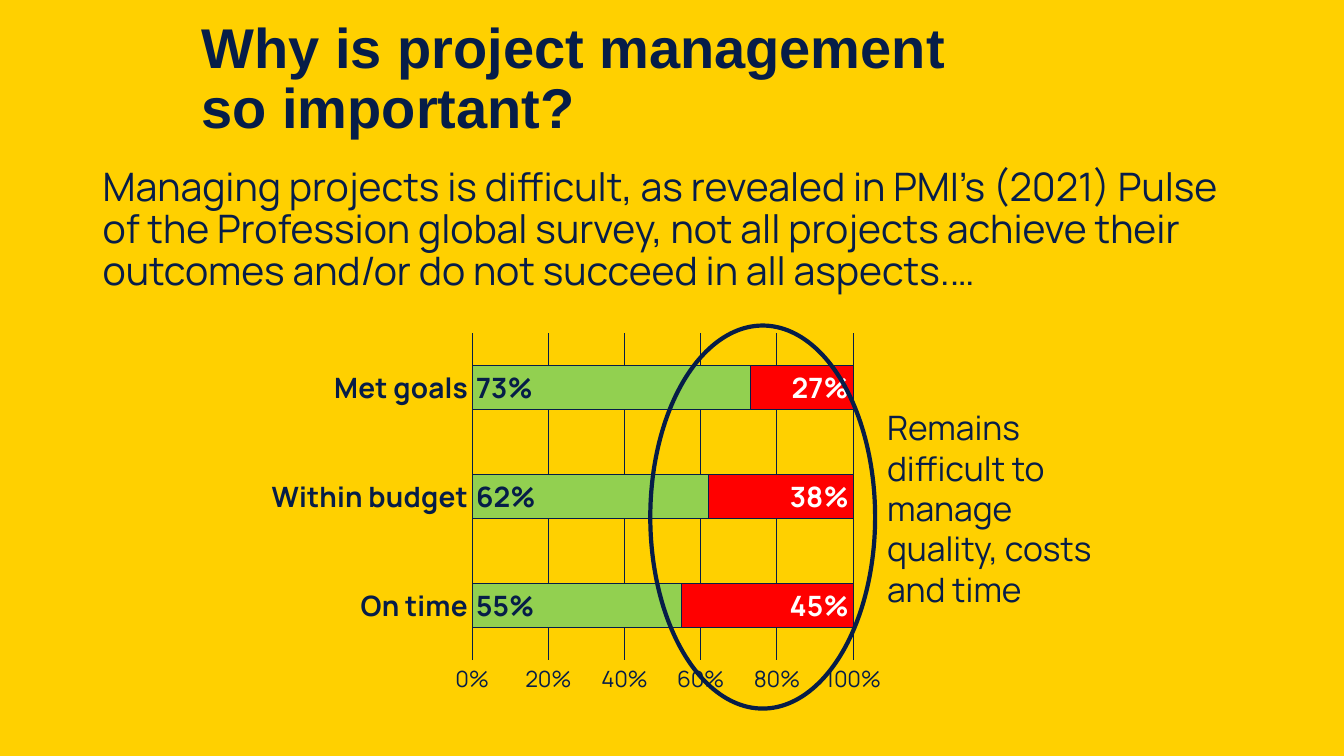
from lxml import etree
from pptx import Presentation
from pptx.chart.data import CategoryChartData
from pptx.dml.color import RGBColor
from pptx.enum.chart import XL_CHART_TYPE, XL_LABEL_POSITION, XL_TICK_MARK
from pptx.enum.shapes import MSO_SHAPE
from pptx.enum.text import MSO_ANCHOR, PP_ALIGN
from pptx.oxml import parse_xml
from pptx.oxml.ns import nsdecls
from pptx.util import Pt

EMU_PER_PX = 9144  # 100 px to the inch
NAVY = RGBColor(0x06, 0x1D, 0x48)
TEXT_NAVY = RGBColor(0x07, 0x1D, 0x49)
YELLOW = RGBColor(0xFF, 0xD0, 0x00)
GREEN = RGBColor(0x92, 0xD0, 0x50)
RED = RGBColor(0xFF, 0x00, 0x00)
WHITE = RGBColor(0xFF, 0xFF, 0xFF)
TITLE_FONT = "Arial"
BODY_FONT = "Manrope"

BAR_STACKED = XL_CHART_TYPE.BAR_STACKED
NO_TICK = XL_TICK_MARK.NONE
INSIDE_BASE = XL_LABEL_POSITION.INSIDE_BASE
INSIDE_END = XL_LABEL_POSITION.INSIDE_END
ELLIPSE = MSO_SHAPE.OVAL
TOP, MIDDLE = MSO_ANCHOR.TOP, MSO_ANCHOR.MIDDLE
LEFT = PP_ALIGN.LEFT

CATEGORIES = ("On time", "Within budget", "Met goals")
# name, values, fill, label position, label colour
SERIES = (
    ("Series 1", (0.55, 0.62, 0.73), GREEN, INSIDE_BASE, NAVY),
    ("Series 2", (0.45, 0.38, 0.27), RED, INSIDE_END, WHITE),
)
# plot area as shares of the chart frame
PLOT_LAYOUT = {"x": 0.34, "y": 0.02, "w": 0.6, "h": 0.87}


def px(*lengths):
    return [length * EMU_PER_PX for length in lengths]


def style_font(font, size, color=NAVY, name=BODY_FONT, bold=False):
    font.name = name
    font.size = Pt(size)
    font.bold = bold
    font.color.rgb = color


def style_line(line, width=0.75):
    line.color.rgb = NAVY
    line.width = Pt(width)


class SlideBuilder:
    def __init__(self, deck):
        self.slide = deck.slides.add_slide(deck.slide_layouts[5])
        fill = self.slide.background.fill
        fill.solid()
        fill.fore_color.rgb = YELLOW

    def set_text(self, box, text, size, color, name, bold, spacing, anchor):
        frame = box.text_frame
        frame.word_wrap = True
        frame.vertical_anchor = anchor
        frame.text = text
        para = frame.paragraphs[0]
        para.alignment = LEFT
        para.line_spacing = spacing
        style_font(para.runs[0].font, size, color, name, bold)

    def title(self, at, text):
        box = self.slide.shapes.title
        box.left, box.top, box.width, box.height = px(*at)
        self.set_text(box, text, 40, NAVY, TITLE_FONT, True, 0.9, MIDDLE)

    def text(self, at, text, size, spacing=1.0):
        box = self.slide.shapes.add_textbox(*px(*at))
        self.set_text(box, text, size, TEXT_NAVY, BODY_FONT, False, spacing, TOP)

    def ellipse(self, at):
        ring = self.slide.shapes.add_shape(ELLIPSE, *px(*at))
        ring.shadow.inherit = False
        ring.fill.background()
        style_line(ring.line, 3)

    def stacked_bars(self, at):
        data = CategoryChartData(number_format="0%")
        data.categories = CATEGORIES
        for name, values, *_ in SERIES:
            data.add_series(name, values)
        frame = self.slide.shapes.add_chart(BAR_STACKED, *px(*at), data)
        chart = frame.chart
        chart.has_legend = False
        chart.has_title = False
        style_font(chart.font, 10)
        self.place_plot(chart)

        plot = chart.plots[0]
        plot.gap_width = 150
        plot.overlap = 100
        plot.vary_by_categories = False
        for series, (_, _, fill, position, color) in zip(plot.series, SERIES):
            series.format.fill.solid()
            series.format.fill.fore_color.rgb = fill
            style_line(series.format.line)
            labels = series.data_labels
            labels.show_value = True
            labels.number_format = "0%"
            labels.number_format_is_linked = False
            labels.position = position
            style_font(labels.font, 20, color, bold=True)

        names, scale = chart.category_axis, chart.value_axis
        for axis, size in ((names, 20), (scale, 16)):
            axis.major_tick_mark = NO_TICK
            axis.minor_tick_mark = NO_TICK
            style_font(axis.tick_labels.font, size, bold=axis is names)
        style_line(names.format.line)
        scale.format.line.fill.background()
        scale.minimum_scale = 0
        scale.maximum_scale = 1
        scale.major_unit = 0.2
        scale.tick_labels.number_format = "0%"
        scale.tick_labels.number_format_is_linked = False
        scale.has_major_gridlines = True
        style_line(scale.major_gridlines.format.line)

    def place_plot(self, chart):
        """Fix the inner plot area inside the chart frame."""
        plot_area = chart.plots[0]._element.getparent()
        for old in plot_area.findall("{*}layout"):
            plot_area.remove(old)
        layout = parse_xml(f"<c:layout {nsdecls('c')}><c:manualLayout/></c:layout>")
        settings = {"layoutTarget": "inner", "xMode": "edge", "yMode": "edge"}
        settings.update(PLOT_LAYOUT)
        namespace = layout.nsmap["c"]
        for tag, value in settings.items():
            etree.SubElement(layout[0], f"{{{namespace}}}{tag}", val=str(value))
        plot_area.insert(0, layout)


def main():
    deck = Presentation()
    deck.slide_width, deck.slide_height = px(1333, 750)
    page = SlideBuilder(deck)
    page.title((190, 7, 778, 145), "Why is project management so important?")
    page.text(
        (92, 161, 1150, 476),
        "Managing projects is difficult, as revealed in PMI’s (2021) Pulse of the "
        "Profession global survey, not all projects achieve their outcomes and/or "
        "do not succeed in all aspects.…",
        28,
        spacing=0.9,
    )
    page.stacked_bars((254, 323, 630, 373))
    page.text((870, 399, 237, 212), "Remains difficult to manage quality, costs and time", 24)
    page.ellipse((645, 323, 223, 380))
    deck.save("out.pptx")


if __name__ == "__main__":
    main()
